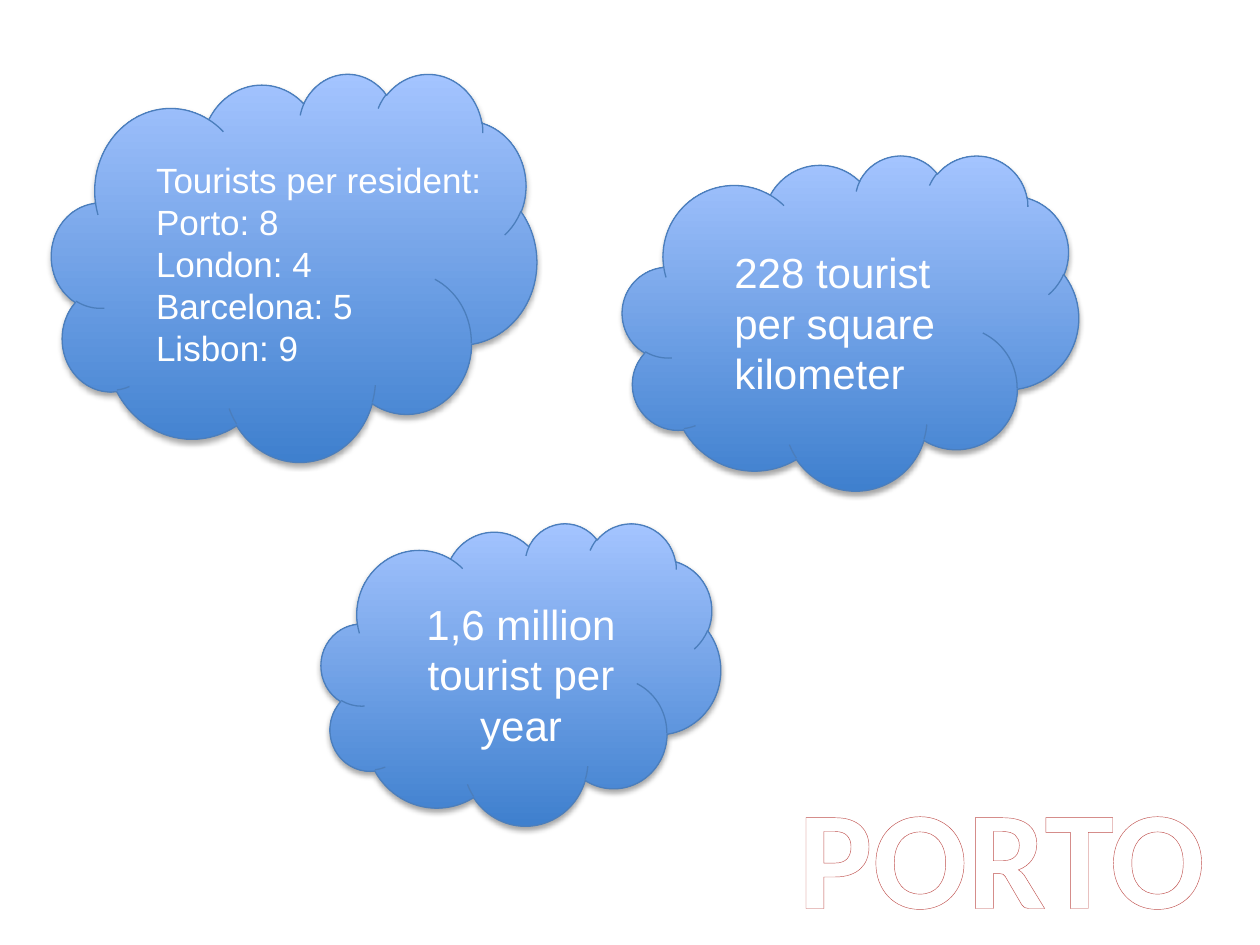
from dataclasses import dataclass

from lxml import etree
from pptx import Presentation
from pptx.dml.color import RGBColor
from pptx.enum.shapes import MSO_SHAPE
from pptx.enum.text import MSO_AUTO_SIZE, PP_ALIGN
from pptx.oxml.ns import qn
from pptx.util import Inches, Pt

CLOUD = MSO_SHAPE.CLOUD
FIT = MSO_AUTO_SIZE.SHAPE_TO_FIT_TEXT
LEFT, CENTER = PP_ALIGN.LEFT, PP_ALIGN.CENTER


@dataclass(frozen=True)
class Theme:
    white: str = "FFFFFF"
    deep: str = "3F80CE"
    light: str = "A4C4FF"
    edge: str = "4B7EBC"
    red: str = "C0504D"
    black: str = "000000"
    body: str = "Arial"
    head: str = "Calibri"
    small: int = 20
    large: int = 24
    title: int = 80


def color(code):
    return RGBColor.from_string(code)


def child(node, tag, **attrs):
    return etree.SubElement(node, qn(tag), {k: str(v) for k, v in attrs.items()})


class Board:
    def __init__(self, slide, theme):
        self.slide = slide
        self.theme = theme

    def cloud(self, *box):
        theme = self.theme
        shape = self.slide.shapes.add_shape(CLOUD, *map(Inches, box))
        shape.fill.gradient()
        shape.fill.gradient_angle = 90
        for stop, code, place in zip(
            shape.fill.gradient_stops, (theme.deep, theme.light), (0, 1)
        ):
            stop.color.rgb = color(code)
            stop.position = place
        shape.line.color.rgb = color(theme.edge)
        shape.line.width = Pt(0.75)
        self.shade(shape)

    def shade(self, shape):
        shape.shadow.inherit = False
        effects = shape._element.spPr.find(qn("a:effectLst"))
        shadow = child(
            effects, "a:outerShdw", blurRad=Pt(3.1), dist=Pt(1.8),
            dir=90 * 60000, rotWithShape=0,
        )
        tint = child(shadow, "a:srgbClr", val=self.theme.black)
        child(tint, "a:alpha", val=35000)

    def text(self, box, lines, size, align=LEFT, wrap=True):
        frame = self.slide.shapes.add_textbox(*map(Inches, box)).text_frame
        frame.word_wrap = wrap
        frame.auto_size = FIT
        for i, line in enumerate(lines):
            para = frame.add_paragraph() if i else frame.paragraphs[0]
            para.alignment = align
            run = para.add_run()
            run.text = line
            run.font.name = self.theme.body
            run.font.size = Pt(size)
            run.font.color.rgb = color(self.theme.white)
        return run

    def title(self, box, word):
        run = self.text(box, [word], self.theme.title, CENTER, wrap=False)
        run.font.name = self.theme.head
        run.font.bold = True
        props = run._r.get_or_add_rPr()
        line = child(props, "a:ln", w=Pt(0.52))
        child(child(line, "a:solidFill"), "a:srgbClr", val=self.theme.red)
        props.insert(0, line)


def main():
    deck = Presentation()
    deck.slide_width, deck.slide_height = Inches(10), Inches(7.5)
    theme = Theme()
    board = Board(deck.slides.add_slide(deck.slide_layouts[6]), theme)

    board.title((6.22, 6.05, 3.46, 1.45), "PORTO")
    board.cloud(0.41, 0.58, 3.85, 3.08)
    board.cloud(4.94, 1.23, 3.62, 2.66)
    board.cloud(2.55, 4.15, 3.17, 2.4)

    ratios = ["Tourists per resident:", "Porto: 8", "London: 4", "Barcelona: 5", "Lisbon: 9"]
    board.text((1.14, 1.21, 3.4, 1.78), ratios, theme.small)
    board.text((5.73, 1.91, 2.03, 1.31), ["228 tourist per square kilometer"], theme.large)
    board.text((3.08, 4.7, 2.11, 1.31), ["1,6 million tourist per year"], theme.large, CENTER)

    deck.save("out.pptx")


if __name__ == "__main__":
    main()
